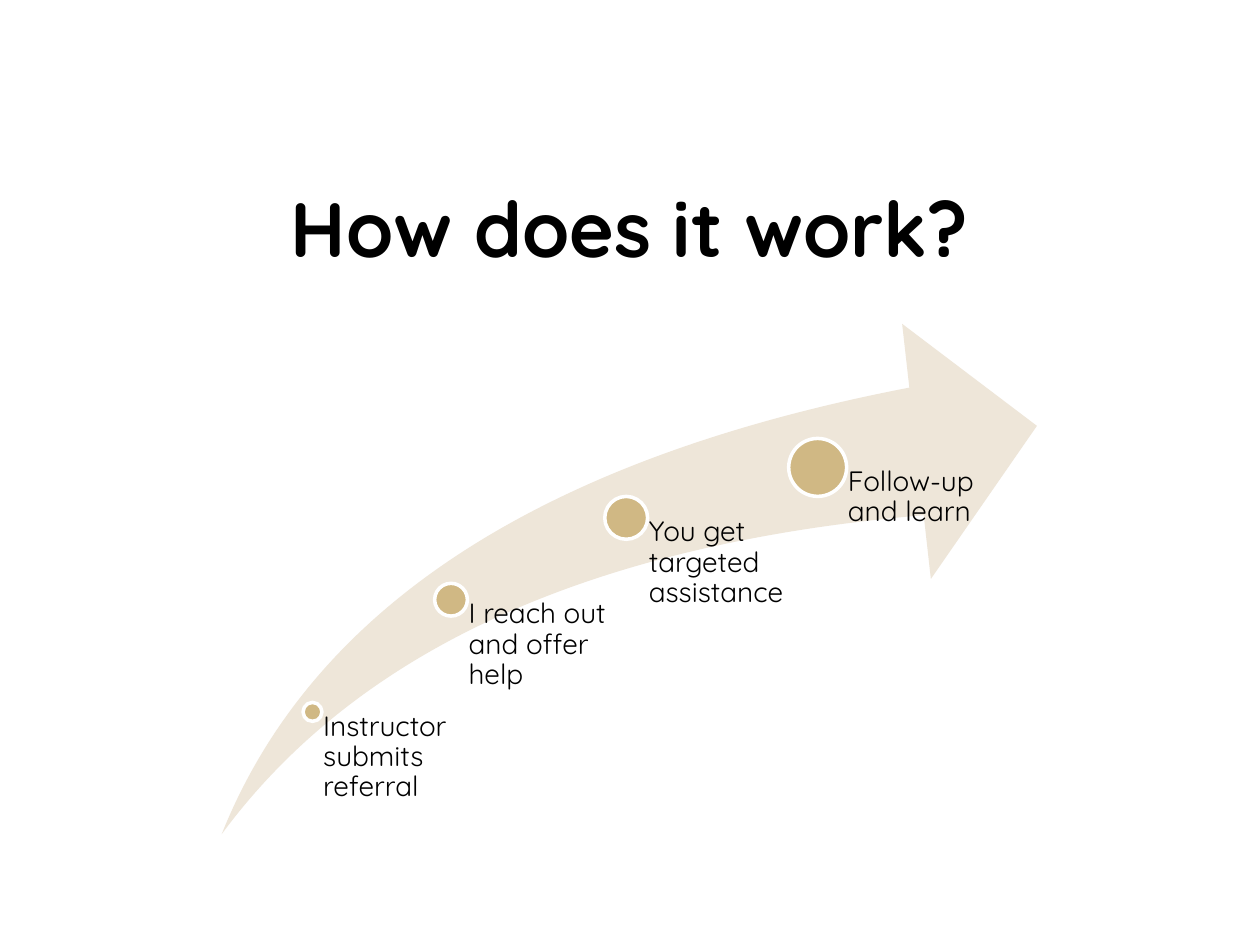
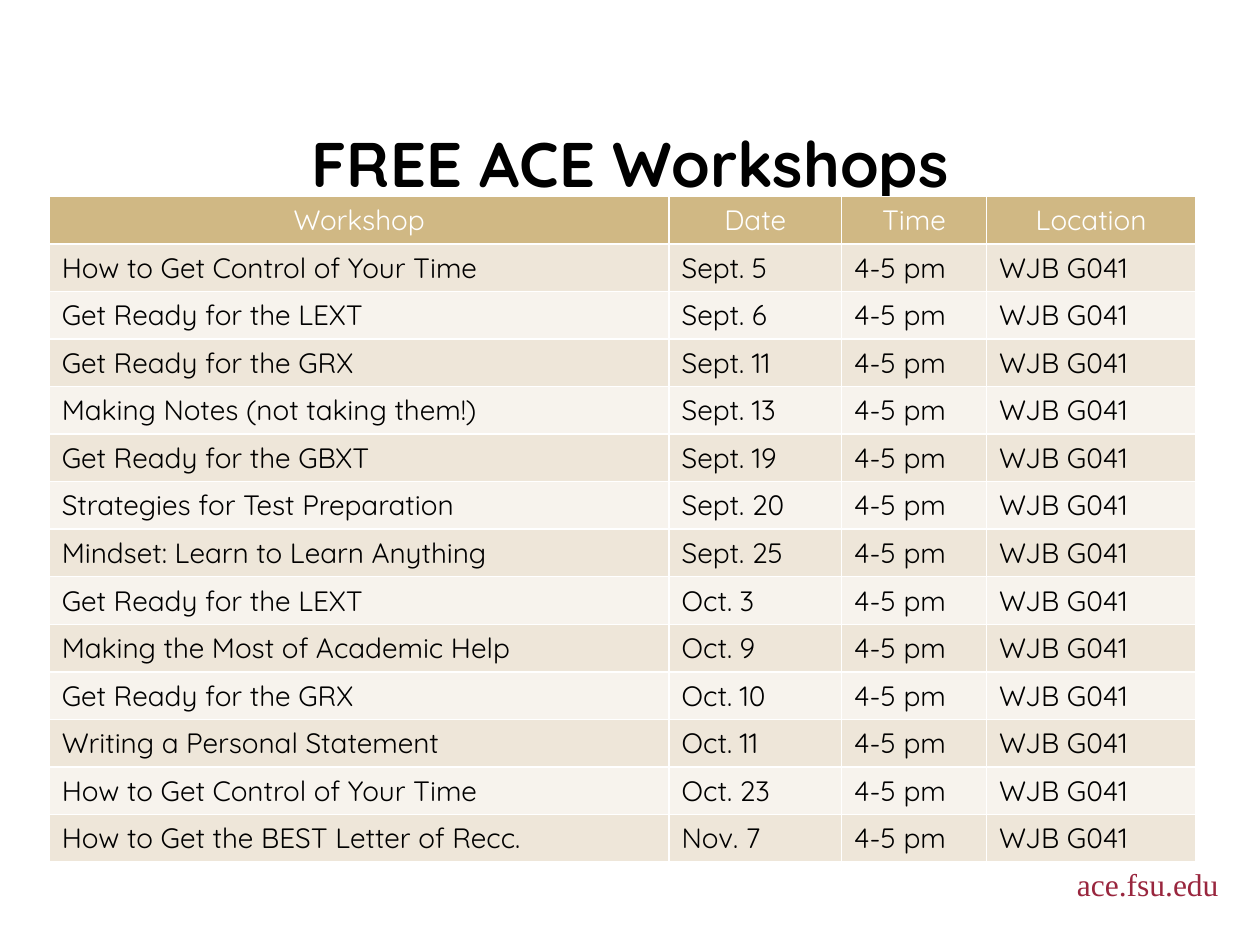
import lxml.etree
import pptx
import pptx.dml.color
import pptx.enum.shapes
import pptx.enum.text
import pptx.oxml.ns
import pptx.util
from collections import namedtuple
from dataclasses import dataclass

Inches = pptx.util.Inches
Box = namedtuple("Box", "left top width height")
Step = namedtuple("Step", "x y diameter label_width label")


@dataclass(frozen=True)
class Theme:
    """Colours, fonts and type sizes shared by the slides."""

    gold: str = "D0B884"
    sand: str = "EEE6D9"
    cream: str = "F7F3ED"
    white: str = "FFFFFF"
    black: str = "000000"
    garnet: str = "99263E"
    font: str = "Quicksand"
    footer_font: str = "Times New Roman"
    title_size: int = 44
    small_title_size: int = 36
    body_size: int = 16
    footer_size: int = 18


THEME = Theme()

STEPS = [
    Step(0.72, 3.08, 0.15, 1.11, "Instructor submits referral"),
    Step(1.82, 2.19, 0.26, 1.36, "I reach out and offer help"),
    Step(3.21, 1.54, 0.34, 1.36, "You get targeted assistance"),
    Step(4.73, 1.14, 0.46, 1.36, "Follow-up and learn"),
]

HEADINGS = ("Workshop", "Date", "Time", "Location")
COLUMN_WIDTHS = (4.92, 1.37, 1.15, 1.66)
HEADER_HEIGHT, ROW_HEIGHT = 0.37, 0.33
TIME, LOCATION = "4-5 pm", "WJB G041"
WORKSHOPS = [
    ("How to Get Control of Your Time", "Sept. 5"),
    ("Get Ready for the LEXT", "Sept. 6"),
    ("Get Ready for the GRX", "Sept. 11"),
    ("Making Notes (not taking them!)", "Sept. 13"),
    ("Get Ready for the GBXT", "Sept. 19"),
    ("Strategies for Test Preparation", "Sept. 20"),
    ("Mindset: Learn to Learn Anything", "Sept. 25"),
    ("Get Ready for the LEXT", "Oct. 3"),
    ("Making the Most of Academic Help", "Oct. 9"),
    ("Get Ready for the GRX", "Oct. 10"),
    ("Writing a Personal Statement", "Oct. 11"),
    ("How to Get Control of Your Time", "Oct. 23"),
    ("How to Get the BEST Letter of Recc.", "Nov. 7"),
]


def colour(value):
    """Return the colour object for a hexadecimal value."""
    return pptx.dml.color.RGBColor.from_string(value)


def set_values(target, values):
    """Set each named attribute of the target."""
    for name, value in values.items():
        setattr(target, name, value)


def place(shape, box):
    """Move and size a shape to a box in inches."""
    set_values(shape, {name: Inches(value) for name, value in box._asdict().items()})


def write(frame, text, size, ink=THEME.black, font=THEME.font, bold=False, **paragraph_values):
    """Write one formatted paragraph into a text frame."""
    frame.text = text
    paragraph = frame.paragraphs[0]
    set_values(paragraph, paragraph_values)
    run_font = paragraph.runs[0].font
    set_values(run_font, {"name": font, "size": pptx.util.Pt(size), "bold": bold})
    run_font.color.rgb = colour(ink)


def add_titled_slide(presentation, title, box, size):
    """Add a title-only slide with its title placed and formatted."""
    slide = presentation.slides.add_slide(presentation.slide_layouts[5])
    shape = slide.shapes.title
    place(shape, box)
    set_values(shape.text_frame, {
        "word_wrap": True,
        "auto_size": pptx.enum.text.MSO_AUTO_SIZE.NONE,
        "vertical_anchor": pptx.enum.text.MSO_ANCHOR.MIDDLE,
    })
    write(shape.text_frame, title, size, bold=True, alignment=pptx.enum.text.PP_ALIGN.CENTER)
    return slide


def add_filled_shape(shapes, kind, box, fill, line=None):
    """Add a preset shape with a plain fill and an optional outline."""
    shape = shapes.add_shape(kind, *map(Inches, box))
    shape.shadow.inherit = False
    shape.fill.solid()
    shape.fill.fore_color.rgb = colour(fill)
    if line:
        shape.line.color.rgb = colour(line)
        shape.line.width = pptx.util.Pt(2)
    else:
        shape.line.fill.background()
    return shape


def add_step(shapes, box, step):
    """Add a dot on the arrow and the label that hangs from its centre."""
    x, y, radius = box.left + step.x, box.top + step.y, step.diameter / 2
    dot = Box(x - radius, y - radius, step.diameter, step.diameter)
    add_filled_shape(shapes, pptx.enum.shapes.MSO_SHAPE.OVAL, dot, THEME.gold, THEME.white)
    label = shapes.add_textbox(0, 0, 0, 0)
    place(label, Box(x, y, step.label_width, box.height - step.y))
    set_values(label.text_frame, {
        "word_wrap": True,
        "margin_left": Inches(radius + 0.01),
        "margin_top": 0,
        "margin_right": 0,
        "margin_bottom": 0,
    })
    write(label.text_frame, step.label, THEME.body_size, line_spacing=0.9)


def add_process_arrow(slide, box):
    """Add the rising arrow with its steps as one group."""
    shapes = slide.shapes.add_group_shape().shapes
    arrow = add_filled_shape(shapes, pptx.enum.shapes.MSO_SHAPE.SWOOSH_ARROW, box, THEME.sand)
    for index in range(2):
        arrow.adjustments[index] = 0.25
    for step in STEPS:
        add_step(shapes, box, step)


def add_borders(cell):
    """Give a table cell thin white borders."""
    properties = cell._tc.get_or_add_tcPr()
    for side in "LRTB":
        line = lxml.etree.SubElement(
            properties, pptx.oxml.ns.qn(f"a:ln{side}"), w=str(pptx.util.Pt(1)))
        fill = lxml.etree.SubElement(line, pptx.oxml.ns.qn("a:solidFill"))
        lxml.etree.SubElement(fill, pptx.oxml.ns.qn("a:srgbClr"), val=THEME.white)


def format_cell(cell, text, row_index):
    """Fill one cell as a heading or as part of a banded row."""
    is_heading = row_index == 0
    add_borders(cell)
    cell.vertical_anchor = pptx.enum.text.MSO_ANCHOR.MIDDLE
    cell.fill.solid()
    band = THEME.sand if row_index % 2 else THEME.cream
    cell.fill.fore_color.rgb = colour(THEME.gold if is_heading else band)
    alignment = pptx.enum.text.PP_ALIGN
    write(cell.text_frame, text, THEME.body_size,
          ink=THEME.white if is_heading else THEME.black,
          alignment=alignment.CENTER if is_heading else alignment.LEFT)


def add_workshop_table(slide, box):
    """Add the workshop schedule."""
    rows = [HEADINGS] + [(name, date, TIME, LOCATION) for name, date in WORKSHOPS]
    frame = slide.shapes.add_table(len(rows), len(HEADINGS), *map(Inches, box))
    table = frame.table
    for column, width in zip(table.columns, COLUMN_WIDTHS):
        column.width = Inches(width)
    for row_index, values in enumerate(rows):
        table.rows[row_index].height = Inches(ROW_HEIGHT if row_index else HEADER_HEIGHT)
        for column_index, text in enumerate(values):
            format_cell(table.cell(row_index, column_index), text, row_index)
    place(frame, box)


def add_web_address(slide, box):
    """Add the right-aligned web address below the table."""
    shape = slide.shapes.add_textbox(*map(Inches, box))
    set_values(shape.text_frame, {
        "word_wrap": True,
        "auto_size": pptx.enum.text.MSO_AUTO_SIZE.SHAPE_TO_FIT_TEXT,
    })
    write(shape.text_frame, "ace.fsu.edu", THEME.footer_size, ink=THEME.garnet,
          font=THEME.footer_font, alignment=pptx.enum.text.PP_ALIGN.RIGHT)


def build_process_slide(presentation):
    """Build the slide that explains the referral process."""
    slide = add_titled_slide(
        presentation, "How does it work?", Box(0.5, 1.27, 9, 1.06), THEME.title_size)
    add_process_arrow(slide, Box(1.76, 2.57, 6.47, 4.05))


def build_workshop_slide(presentation):
    """Build the slide that lists the workshops."""
    slide = add_titled_slide(
        presentation, "FREE ACE Workshops", Box(0.5, 1.14, 9, 0.29), THEME.small_title_size)
    add_workshop_table(slide, Box(0.39, 1.56, 9.11, 5.13))
    add_web_address(slide, Box(0.3, 6.82, 9.47, 0.4))


def main():
    """Build and save the presentation."""
    presentation = pptx.Presentation()
    set_values(presentation, {"slide_width": Inches(10), "slide_height": Inches(7.5)})
    build_process_slide(presentation)
    build_workshop_slide(presentation)
    presentation.save("out.pptx")


if __name__ == "__main__":
    main()
